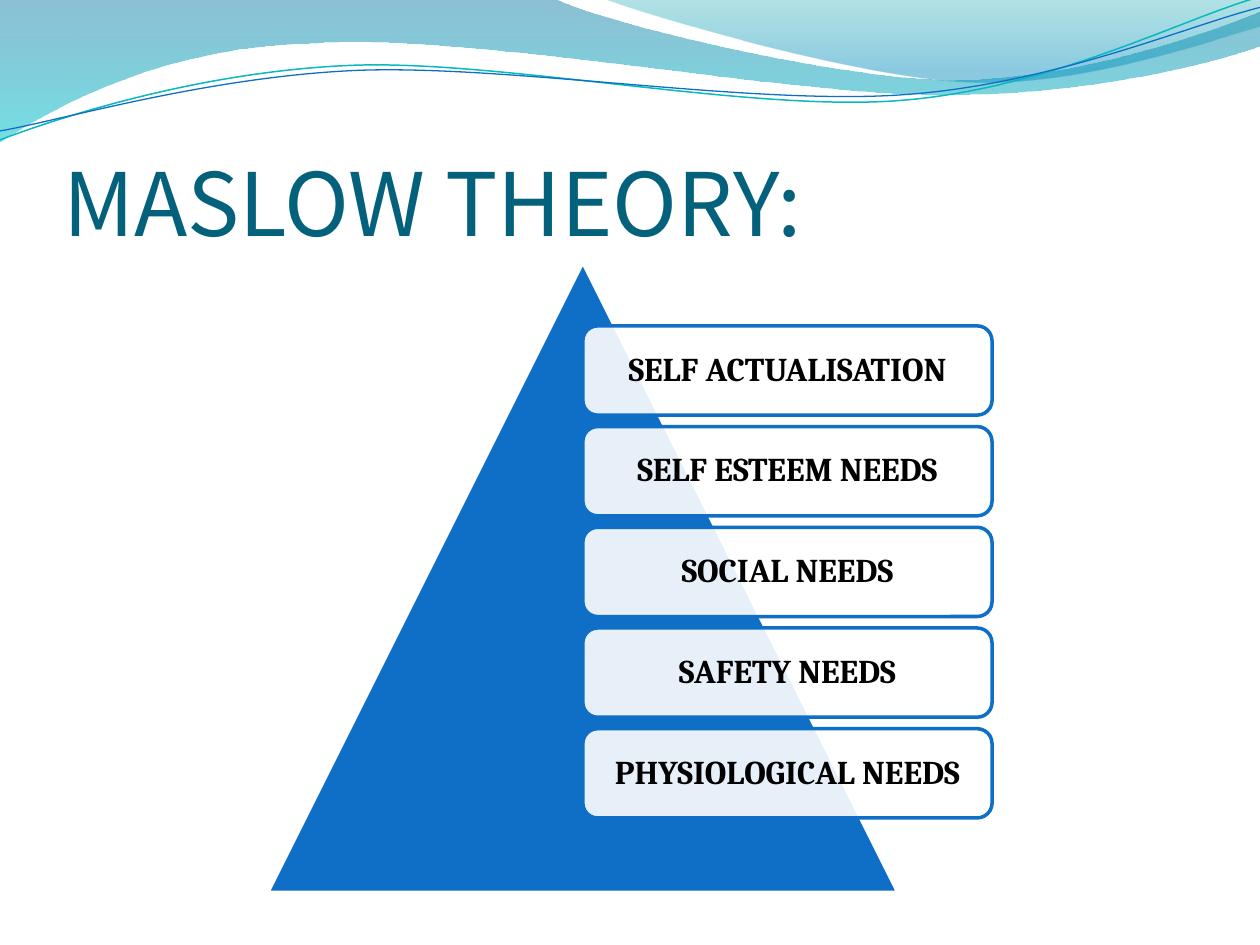
from dataclasses import dataclass
from typing import Optional

import lxml.etree
import pptx
import pptx.dml.color
import pptx.enum.shapes
import pptx.enum.text
import pptx.oxml
import pptx.oxml.ns
import pptx.util

Cm = pptx.util.Cm
Pt = pptx.util.Pt
qn = pptx.oxml.ns.qn

COLORS = {
    "blue": "0F6FC6", "teal": "0AB8BF", "title": "04617B",
    "white": "FFFFFF", "black": "000000",
    "wave_top": "0074A1", "wave_bottom": "00C6CF",
    "crest_top": "00A1A9", "crest_bottom": "008BBF",
}
NEEDS = ["SELF ACTUALISATION", "SELF ESTEEM NEEDS", "SOCIAL NEEDS",
         "SAFETY NEEDS", "PHYSIOLOGICAL NEEDS"]


@dataclass
class Stop:
    position: int
    color: str
    alpha: int


@dataclass
class Wave:
    start: tuple
    segments: list
    stops: Optional[list] = None
    color: str = ""
    width: float = 0


WAVES = [
    Wave((0, 0), [
        [(11.18, -0.03)],
        [(12.09, 0.43), (16.87, 1.6), (19.25, 1.6)],
        [(21.67, 1.6), (24.33, 0.66), (25.4, 0.23)],
        [(25.43, 0.91)],
        [(24.97, 1.12), (22.1, 1.93), (18.95, 1.91)],
        [(15.8, 1.91), (9.7, 0.71), (6.53, 0.86)],
        [(3.28, 0.91), (1.17, 2.11), (-0.03, 2.87)],
    ], stops=[Stop(0, "wave_top", 45), Stop(100, "wave_bottom", 55)]),
    Wave((12.17, -0.03), [
        [(12.93, 0.28), (17.32, 1.57), (19.53, 1.65)],
        [(21.74, 1.75), (24.41, 0.81), (25.4, 0.53)],
        [(25.4, 0)],
    ], stops=[Stop(0, "crest_top", 30), Stop(80, "crest_bottom", 45)]),
    Wave((0, 2.82), [
        [(1.22, 2.36), (4.01, 1.45), (7.04, 1.32)],
        [(10.03, 1.19), (15.06, 2.26), (18.11, 2.03)],
        [(21.16, 1.8), (23.83, 0.38), (25.35, -0.05)],
    ], color="teal", width=0.85),
    Wave((0, 2.64), [
        [(1.19, 2.44), (4.17, 1.55), (7.19, 1.42)],
        [(10.24, 1.3), (15.16, 2.13), (18.21, 1.91)],
        [(21.23, 1.7), (23.9, 0.53), (25.4, 0.15)],
    ], color="blue", width=0.75),
]


def rgb(name: str) -> pptx.dml.color.RGBColor:
    return pptx.dml.color.RGBColor.from_string(COLORS[name])


def set_alpha(clr, percent: int) -> None:
    lxml.etree.SubElement(clr, qn("a:alpha")).set("val", str(percent * 1000))


def set_gradient(sp, stops: list) -> None:
    sp.fill.gradient()
    grad = sp._element.spPr.find(qn("a:gradFill"))
    for child in list(grad):
        grad.remove(child)
    gs_list = lxml.etree.SubElement(grad, qn("a:gsLst"))
    for stop in stops:
        gs = lxml.etree.SubElement(gs_list, qn("a:gs"))
        gs.set("pos", str(stop.position * 1000))
        clr = lxml.etree.SubElement(gs, qn("a:srgbClr"))
        clr.set("val", COLORS[stop.color])
        set_alpha(clr, stop.alpha)
    lin = lxml.etree.SubElement(grad, qn("a:lin"))
    lin.set("ang", "5400000")
    lin.set("scaled", "0")


def bend(sp, segments: list) -> None:
    lines = iter(list(sp._element.spPr.iter(qn("a:lnTo"))))
    for segment in segments:
        group = [next(lines) for _ in segment]
        if len(group) == 3:
            curve = pptx.oxml.parse_xml(
                f"<a:cubicBezTo {pptx.oxml.ns.nsdecls('a')}/>")
            group[0].addprevious(curve)
            for line in group:
                curve.append(line[0])
                line.getparent().remove(line)


def add_wave(s, wave: Wave) -> None:
    x, y = wave.start
    builder = s.shapes.build_freeform(Cm(x), Cm(y))
    builder.add_line_segments(
        [(Cm(px), Cm(py)) for segment in wave.segments for px, py in segment],
        close=bool(wave.stops))
    sp = builder.convert_to_shape()
    bend(sp, wave.segments)
    sp.shadow.inherit = False
    if wave.stops:
        set_gradient(sp, wave.stops)
        sp.line.fill.background()
    else:
        sp.fill.background()
        sp.line.color.rgb = rgb(wave.color)
        sp.line.width = Pt(wave.width)


def add_block(s, kind, left: float, top: float, width: float, height: float,
              fill: str, line: str):
    sp = s.shapes.add_shape(kind, Cm(left), Cm(top), Cm(width), Cm(height))
    sp.shadow.inherit = False
    sp.fill.solid()
    sp.fill.fore_color.rgb = rgb(fill)
    sp.line.color.rgb = rgb(line)
    sp.line.width = Pt(2)
    return sp


def add_run(p, text: str, font: str, size: float, color: str,
            bold: bool = False) -> None:
    r = p.add_run()
    r.text = text
    r.font.name = font
    r.font.size = Pt(size)
    r.font.bold = bold
    r.font.color.rgb = rgb(color)


def add_need(s, text: str, top: float) -> None:
    sp = add_block(s, pptx.enum.shapes.MSO_SHAPE.ROUNDED_RECTANGLE,
                   11.75, top, 8.25, 1.8, "white", "blue")
    set_alpha(sp._element.spPr.find(qn("a:solidFill"))[0], 90)
    tf = sp.text_frame
    tf.word_wrap = True
    tf.vertical_anchor = pptx.enum.text.MSO_ANCHOR.MIDDLE
    tf.margin_left = tf.margin_right = tf.margin_top = tf.margin_bottom = Cm(0.2)
    p = tf.paragraphs[0]
    p.alignment = pptx.enum.text.PP_ALIGN.CENTER
    p.line_spacing = 0.9
    add_run(p, text, "Cambria", 19, "black", True)


def format_title(s, text: str) -> None:
    sp = s.shapes.title
    sp.left, sp.top, sp.width, sp.height = Cm(1.27), Cm(1.94), Cm(22.86), Cm(3.18)
    tf = sp.text_frame
    tf.word_wrap = True
    tf.vertical_anchor = pptx.enum.text.MSO_ANCHOR.BOTTOM
    tf.margin_left = tf.margin_right = tf.margin_bottom = 0
    tf.margin_top = Cm(0.13)
    p = tf.paragraphs[0]
    p.alignment = pptx.enum.text.PP_ALIGN.LEFT
    add_run(p, text, "Noto Sans CJK KR", 50, "title")


def main() -> None:
    prs = pptx.Presentation()
    prs.slide_width, prs.slide_height = Cm(25.4), Cm(19.05)
    s = prs.slides.add_slide(prs.slide_layouts[5])
    for wave in WAVES:
        add_wave(s, wave)
    format_title(s, "MASLOW THEORY:")
    add_block(s, pptx.enum.shapes.MSO_SHAPE.ISOSCELES_TRIANGLE,
              5.4, 5.29, 12.7, 12.7, "blue", "white")
    for i, need in enumerate(NEEDS):
        add_need(s, need, 6.57 + i * 2.03)
    prs.save("out.pptx")


if __name__ == "__main__":
    main()
